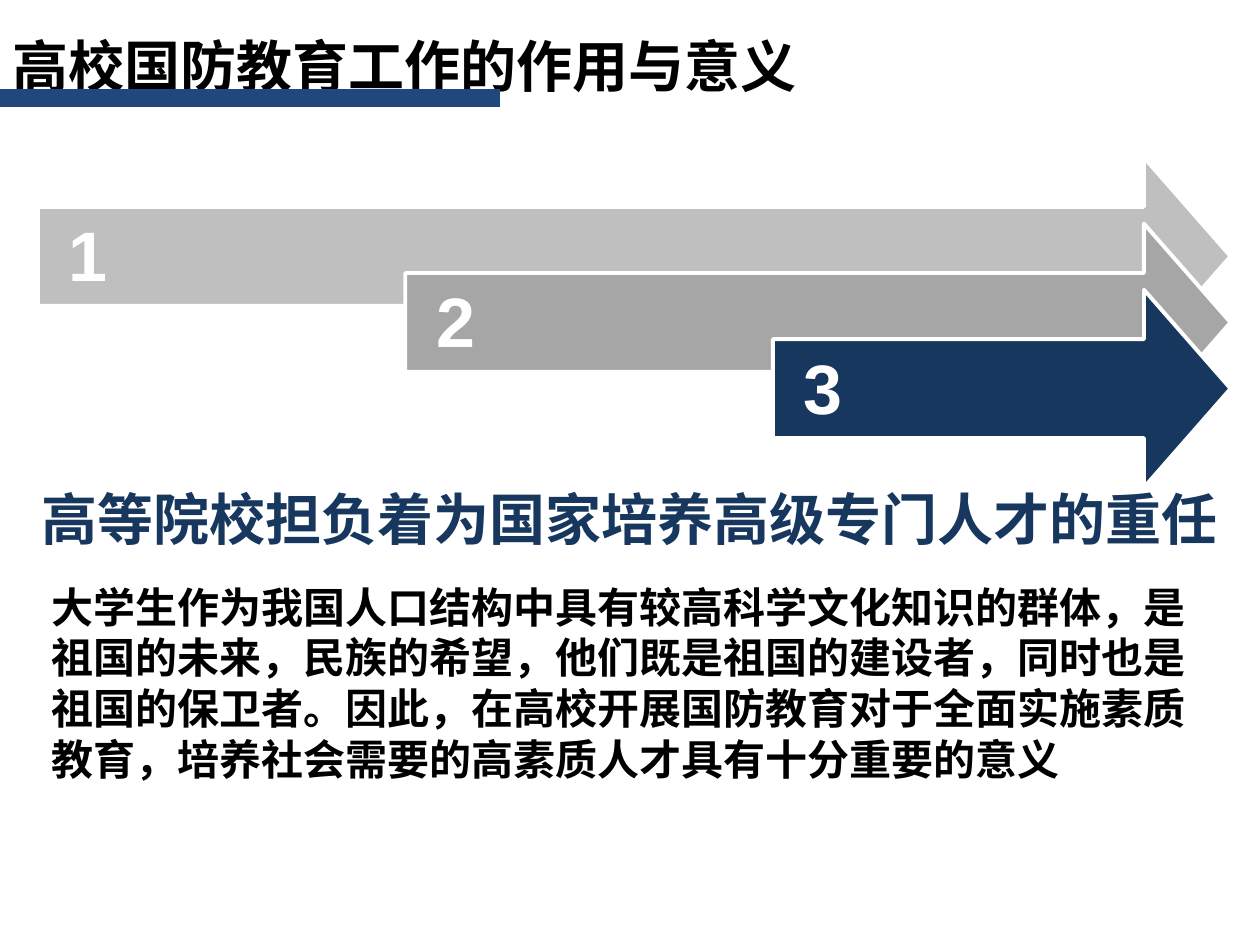
from lxml.etree import SubElement
from pptx import Presentation
from pptx.dml.color import RGBColor
from pptx.enum.shapes import MSO_CONNECTOR
from pptx.enum.text import MSO_ANCHOR, MSO_AUTO_SIZE, PP_ALIGN
from pptx.oxml.ns import qn
from pptx.util import Pt

BLACK = RGBColor(0x00, 0x00, 0x00)
WHITE = RGBColor(0xFF, 0xFF, 0xFF)
BLUE = RGBColor(0x1F, 0x49, 0x7D)
NAVY = RGBColor(0x17, 0x37, 0x5E)
LIGHT = RGBColor(0xBF, 0xBF, 0xBF)
GREY = RGBColor(0xA6, 0xA6, 0xA6)
HAN = "Noto Sans CJK SC"
LATIN = "Arial"


def put(shape, text, size, color=BLACK, font=HAN, wrap=True):
    """Write bold text; Han lines get a tight fixed pitch."""
    frame = shape.text_frame
    frame.auto_size = MSO_AUTO_SIZE.NONE
    frame.word_wrap = wrap
    frame.vertical_anchor = MSO_ANCHOR.TOP
    para = frame.paragraphs[0]
    para.alignment = PP_ALIGN.LEFT
    run = para.add_run()
    run.text = text
    run.font.size = Pt(size)
    run.font.bold = True
    run.font.name = font
    run.font.color.rgb = color
    if font == HAN:
        SubElement(run.font._element, qn("a:ea")).set("typeface", font)
        para.line_spacing = Pt(round(size * 1.21, 1))
        frame.margin_top = Pt(round(3.6 + size * 0.085, 1))


def label(slide, box, text, size, **style):
    shape = slide.shapes.add_textbox(*map(Pt, box))
    put(shape, text, size, **style)


def header(slide, box, text):
    left, top, width, height = box
    rule = top + 44.6
    line = slide.shapes.add_connector(
        MSO_CONNECTOR.STRAIGHT, Pt(left), Pt(rule), Pt(left + 286), Pt(rule))
    line.line.color.rgb = BLUE
    line.line.width = Pt(10)
    SubElement(line._element.spPr, qn("a:effectLst"))
    title = slide.shapes.title
    title.left, title.top, title.width, title.height = map(Pt, box)
    put(title, text, 32)


def arrow(slide, box, color):
    left, top, width, height = box
    right, neck = left + width, left + width - 49.5
    upper, lower = top + height / 4, top + height * 3 / 4
    spots = [(neck, upper), (neck, top), (right, top + height / 2),
             (neck, top + height), (neck, lower), (left, lower)]
    pen = slide.shapes.build_freeform(Pt(left), Pt(upper))
    pen.add_line_segments([(Pt(x), Pt(y)) for x, y in spots], close=True)
    shape = pen.convert_to_shape()
    shape.shadow.inherit = False
    shape.fill.solid()
    shape.fill.fore_color.rgb = color
    shape.line.color.rgb = WHITE
    shape.line.width = Pt(2.25)


def steps(slide, box, colors):
    """Stack arrows that share a right edge, each lower and shorter."""
    left, top, width, height = box
    tall = 113
    drop = (height - tall) / (len(colors) - 1)
    for i, color in enumerate(colors):
        x, y = i * 210, top + i * drop
        arrow(slide, (left + x, y, width - x, tall), color)
        label(slide, (left + x + 10.6, y + 27.5, 39.6, 55.4), str(i + 1), 40,
              color=WHITE, font=LATIN, wrap=False)


def main():
    deck = Presentation()
    deck.slide_width, deck.slide_height = Pt(720), Pt(540)
    slide = deck.slides.add_slide(deck.slide_layouts[5])
    header(slide, (0, 11.5, 528.5, 46), "高校国防教育工作的作用与意义")
    steps(slide, (21.6, 90, 681.6, 188.6), [LIGHT, GREY, NAVY])
    label(slide, (22.3, 326.2, 663.8, 123.8),
          "大学生作为我国人口结构中具有较高科学文化知识的群体，是祖国的未来，"
          "民族的希望，他们既是祖国的建设者，同时也是祖国的保卫者。因此，"
          "在高校开展国防教育对于全面实施素质教育，"
          "培养社会需要的高素质人才具有十分重要的意义", 24)
    label(slide, (16.6, 270, 693.4, 46),
          "高等院校担负着为国家培养高级专门人才的重任", 32,
          color=NAVY, wrap=False)
    deck.save("out.pptx")


if __name__ == "__main__":
    main()
